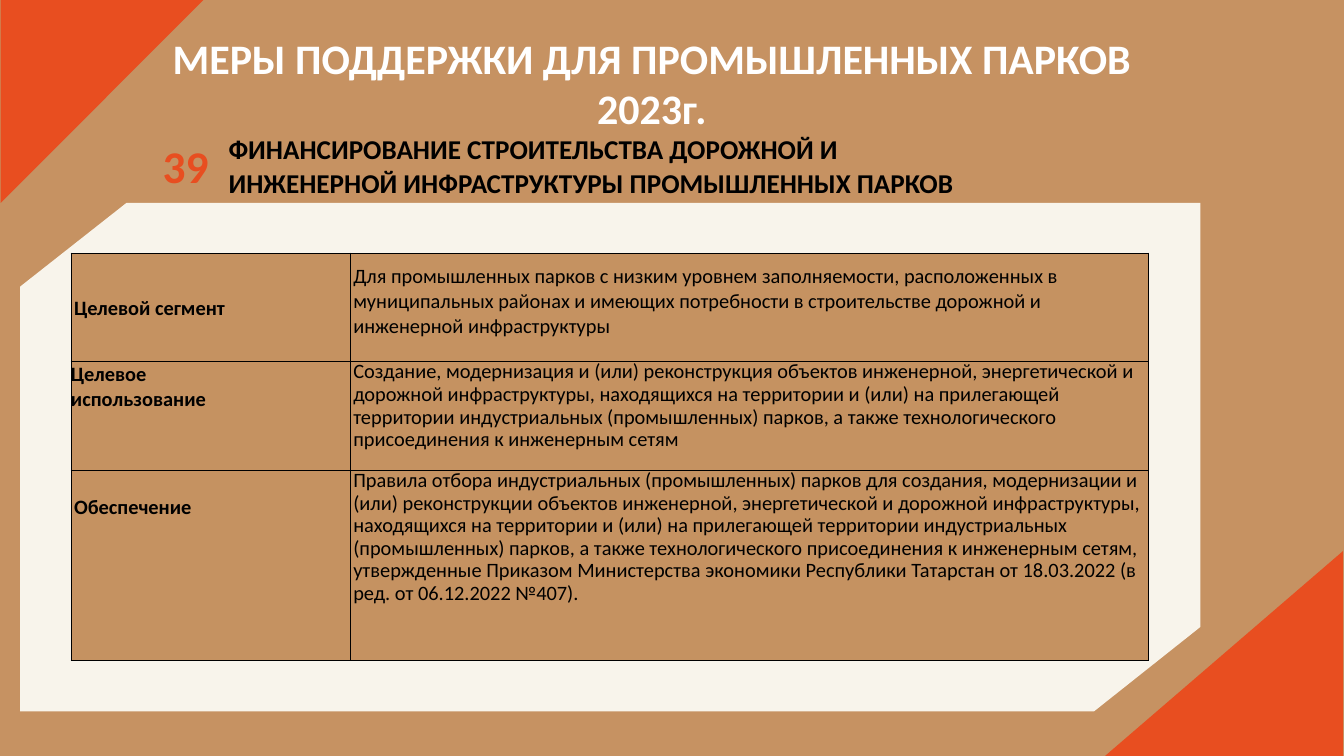
import pptx
import pptx.dml.color
import pptx.enum.text
import pptx.oxml
import pptx.oxml.ns
import pptx.util

WIDTH = pptx.util.Inches(21.99)
HEIGHT = pptx.util.Inches(12.37)
ALIGN = pptx.enum.text.PP_ALIGN
ANCHOR = pptx.enum.text.MSO_ANCHOR

COLOURS = {
    "sand": "C69262",
    "cell": "C59261",
    "cream": "F8F4EB",
    "orange": "E84E20",
    "white": "FFFFFF",
    "black": "000000",
}

# Outlines as (column, row) points, in percent of the slide's width and height.
PANEL = [(89.31, 26.84), (9.41, 26.84), (1.5, 37.91),
         (1.5, 94.1), (81.4, 94.1), (89.31, 82.94)]
TOP_CORNER = [(15.14, 0), (0.05, 0), (0.05, 26.84)]
BOTTOM_CORNER = [(99.91, 72.92), (82.22, 100), (99.91, 100)]

COLUMN_WIDTHS = [20.78, 59.39]
ROW_HEIGHTS = [14.39, 14.39, 25.14]

# Each cell: text, top margin and left indent in inches, exact line spacing in points.
MEASURES = [
    [("Целевой сегмент", 0.7, 0.05, None),
     ("Для промышленных парков с низким уровнем заполняемости, расположенных в "
      "муниципальных районах и имеющих потребности в строительстве дорожной и "
      "инженерной инфраструктуры", 0.18, 0.05, None)],
    [("Целевое\nиспользование", 0, 0, None),
     ("Создание, модернизация и (или) реконструкция объектов инженерной, "
      "энергетической и дорожной инфраструктуры, находящихся на территории и "
      "(или) на прилегающей территории индустриальных (промышленных) парков, "
      "а также технологического присоединения к инженерным сетям",
      0, 0.05, 26.6)],
    [("Обеспечение", 0.4, 0.05, None),
     ("Правила отбора индустриальных (промышленных) парков для создания, "
      "модернизации и (или) реконструкции объектов инженерной, энергетической и "
      "дорожной инфраструктуры, находящихся на территории и (или) на прилегающей "
      "территории индустриальных (промышленных) парков, а также технологического "
      "присоединения к инженерным сетям, утвержденные Приказом Министерства "
      "экономики Республики Татарстан от 18.03.2022 (в ред. от 06.12.2022 №407).",
      0, 0.05, 26.6)],
]


def across(percent):
    return round(WIDTH * percent / 100)


def down(percent):
    return round(HEIGHT * percent / 100)


def area(left, top, width, height):
    return across(left), down(top), across(width), down(height)


def set_all(target, values):
    for name, value in values.items():
        setattr(target, name, value)


def paint(fill, colour):
    fill.solid()
    fill.fore_color.rgb = pptx.dml.color.RGBColor.from_string(COLOURS[colour])


def write(frame, text, size, colour, bold=True, **para_format):
    """Fill a text frame, one paragraph per line of the text."""
    frame.text = text
    for para in frame.paragraphs:
        set_all(para, para_format)
        for span in para.runs:
            set_all(span.font, {"name": "Calibri", "size": pptx.util.Pt(size),
                                "bold": bold})
            paint(span.font.fill, colour)


def format_frame(frame):
    set_all(frame, {"margin_left": 0, "margin_right": 0, "margin_bottom": 0,
                    "margin_top": pptx.util.Inches(0.01), "word_wrap": True,
                    "auto_size": pptx.enum.text.MSO_AUTO_SIZE.NONE,
                    "vertical_anchor": ANCHOR.TOP})


def add_title(page, text):
    title = page.shapes.title
    left, top, width, height = area(8.87, 4.2, 79.26, 13.58)
    set_all(title, {"left": left, "top": top, "width": width, "height": height})
    format_frame(title.text_frame)
    write(title.text_frame, text, 49.5, "white", alignment=ALIGN.CENTER)


def add_label(page, place, text, size, colour):
    box = page.shapes.add_textbox(*area(*place))
    format_frame(box.text_frame)
    write(box.text_frame, text, size, colour, space_before=pptx.util.Pt(1))


def add_outline(page, points, colour):
    corners = [(across(column), down(row)) for column, row in points]
    builder = page.shapes.build_freeform(*corners[0])
    builder.add_line_segments(corners[1:], close=True)
    shape = builder.convert_to_shape()
    shape.shadow.inherit = False
    paint(shape.fill, colour)
    shape.line.fill.background()


def add_borders(cell):
    properties = cell._tc.get_or_add_tcPr()
    for index, side in enumerate(("lnL", "lnR", "lnT", "lnB")):
        properties.insert(index, pptx.oxml.parse_xml(
            f'<a:{side} {pptx.oxml.ns.nsdecls("a")} w="12700"><a:solidFill>'
            f'<a:srgbClr val="{COLOURS["black"]}"/></a:solidFill></a:{side}>'))


def fill_cell(cell, text, top, indent, spacing, bold):
    set_all(cell, {"margin_left": pptx.util.Inches(indent), "margin_right": 0,
                   "margin_top": pptx.util.Inches(top), "margin_bottom": 0,
                   "vertical_anchor": ANCHOR.TOP})
    write(cell.text_frame, text, 24, "black", bold, alignment=ALIGN.LEFT,
          line_spacing=pptx.util.Pt(spacing) if spacing else None)
    paint(cell.fill, "cell")
    add_borders(cell)


def add_measures(page):
    place = area(5.28, 33.47, sum(COLUMN_WIDTHS), sum(ROW_HEIGHTS))
    table = page.shapes.add_table(
        len(ROW_HEIGHTS), len(COLUMN_WIDTHS), *place).table
    set_all(table, {"first_row": False, "horz_banding": False})
    for column, width in zip(table.columns, COLUMN_WIDTHS):
        column.width = across(width)
    for row, height, measures in zip(table.rows, ROW_HEIGHTS, MEASURES):
        row.height = down(height)
        for index, (cell, measure) in enumerate(zip(row.cells, measures)):
            fill_cell(cell, *measure, bold=index == 0)


def main():
    deck = pptx.Presentation()
    set_all(deck, {"slide_width": WIDTH, "slide_height": HEIGHT})
    page = deck.slides.add_slide(deck.slide_layouts.get_by_name("Title Only"))
    paint(page.background.fill, "sand")
    add_outline(page, PANEL, "cream")
    add_title(page, "МЕРЫ ПОДДЕРЖКИ ДЛЯ ПРОМЫШЛЕННЫХ ПАРКОВ 2023г.")
    add_measures(page)
    add_label(page, (17.01, 17.46, 77.67, 8.97),
              "ФИНАНСИРОВАНИЕ СТРОИТЕЛЬСТВА ДОРОЖНОЙ И\n"
              "ИНЖЕНЕРНОЙ ИНФРАСТРУКТУРЫ ПРОМЫШЛЕННЫХ ПАРКОВ", 32, "black")
    add_label(page, (12.1, 18.19, 3.55, 7.36), "39", 53.4, "orange")
    for corner in (TOP_CORNER, BOTTOM_CORNER):
        add_outline(page, corner, "orange")
    deck.save("out.pptx")


if __name__ == "__main__":
    main()
